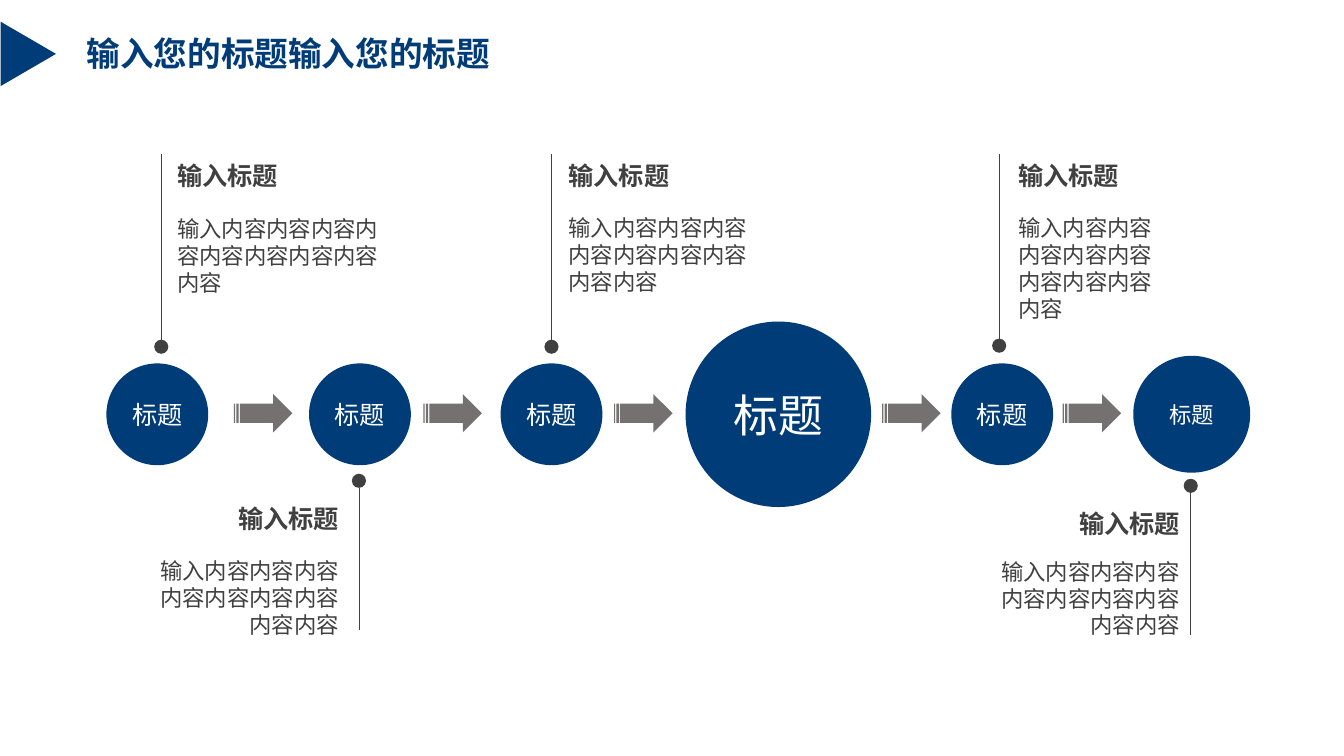
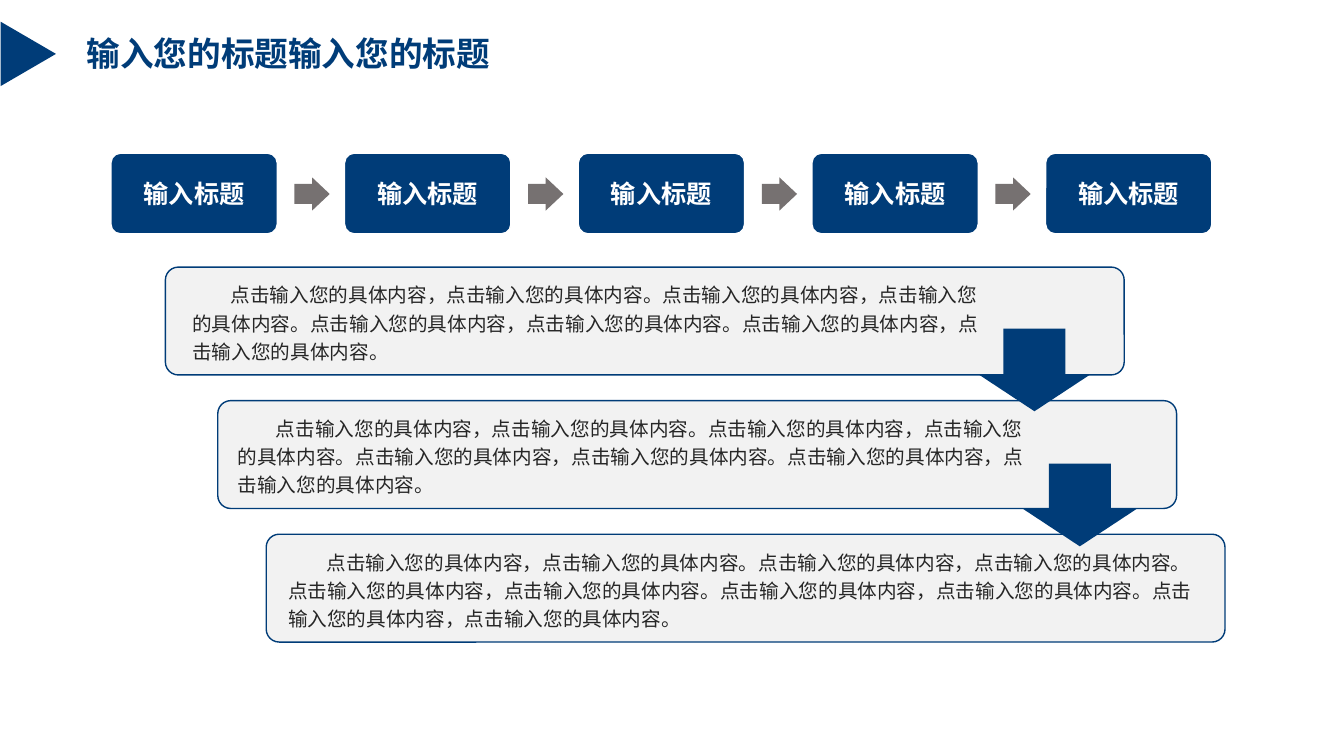
from dataclasses import dataclass

from lxml.etree import SubElement
from pptx import Presentation
from pptx.dml.color import RGBColor
from pptx.enum.shapes import MSO_CONNECTOR, MSO_SHAPE
from pptx.enum.text import MSO_ANCHOR, MSO_AUTO_SIZE, PP_ALIGN
from pptx.oxml.ns import qn
from pptx.util import Inches, Pt


@dataclass(frozen=True)
class Theme:
    """Colours, font and type sizes shared by the slides."""
    navy: str = "003C78"
    grey: str = "767171"
    dark: str = "404040"
    ink: str = "262626"
    pale: str = "F2F2F2"
    white: str = "FFFFFF"
    font: str = "Noto Sans CJK JP"
    title: int = 24
    head: int = 18
    body: int = 16
    note: int = 14
    big: int = 32


T = Theme()
TITLE = "输入您的标题输入您的标题"
HEAD = "输入标题"
CONTENT = "输入" + "内容" * 9
SENTENCE = "点击输入您的具体内容，点击输入您的具体内容。"


def style(p, size, color, bold=False, align=PP_ALIGN.LEFT):
    """Format every run of a paragraph."""
    p.alignment = align
    for r in p.runs:
        r.font.size = Pt(size)
        r.font.bold = bold
        r.font.color.rgb = RGBColor.from_string(color)
        r.font.name = T.font
        SubElement(r._r.get_or_add_rPr(), qn("a:ea")).set("typeface", T.font)


def shape(s, kind, x, y, w, h, fill, line=None, adj=()):
    """Add a flat preset shape."""
    sp = s.shapes.add_shape(kind, Inches(x), Inches(y), Inches(w), Inches(h))
    sp.shadow.inherit = False
    sp.fill.solid()
    sp.fill.fore_color.rgb = RGBColor.from_string(fill)
    if line:
        sp.line.color.rgb = RGBColor.from_string(line)
        sp.line.width = Pt(1)
    else:
        sp.line.fill.background()
    for i, value in enumerate(adj):
        sp.adjustments[i] = value
    return sp


def label(sp, text, size, bold=False):
    """Centre white text in a shape."""
    tf = sp.text_frame
    tf.text = text
    tf.word_wrap = True
    tf.vertical_anchor = MSO_ANCHOR.MIDDLE
    tf.margin_left = tf.margin_right = 0
    style(tf.paragraphs[0], size, T.white, bold, PP_ALIGN.CENTER)


def titled_slide(prs):
    """Add a slide with the title and the edge triangle."""
    s = prs.slides.add_slide(prs.slide_layouts[5])
    sp = s.shapes.title
    sp.left, sp.top, sp.width, sp.height = map(Inches, (0.76, 0.28, 4.24, 0.5))
    tf = sp.text_frame
    tf.text = TITLE
    tf.word_wrap = False
    tf.auto_size = MSO_AUTO_SIZE.NONE
    tf.vertical_anchor = MSO_ANCHOR.MIDDLE
    style(tf.paragraphs[0], T.title, T.navy, True)
    shape(s, MSO_SHAPE.ISOSCELES_TRIANGLE, -0.04, 0.26, 0.64, 0.55, T.navy).rotation = 90
    return s


def circle_chain(s, y):
    """Draw circles and striped arrows centred on the height y."""
    circles = [(1.56, 1.01, T.head), (3.57, 1.01, T.head), (5.47, 1.01, T.head),
               (7.72, 1.84, T.big), (9.94, 1.01, T.head), (11.82, 1.16, T.body)]
    for cx, d, size in circles:
        sp = shape(s, MSO_SHAPE.OVAL, cx - d / 2, y - d / 2, d, d, T.navy)
        label(sp, "标题", size)
    for x in (2.32, 4.2, 6.09, 8.75, 10.54):
        shape(s, MSO_SHAPE.STRIPED_RIGHT_ARROW, x, y - 0.2, 0.58, 0.38, T.grey)


def callout(s, x, y, w, h, gap, space, above):
    """Draw a dotted stem at x, y to y + h, with text right of it above the chain or left below."""
    dot = 0.14
    dot_y = y + h - dot if above else y
    shape(s, MSO_SHAPE.OVAL, x - dot / 2, dot_y, dot, dot, T.dark)
    start, end = (dot_y, y) if above else (y + dot, y + h)
    cx = s.shapes.add_connector(MSO_CONNECTOR.STRAIGHT, Inches(x), Inches(start), Inches(x), Inches(end))
    cx.line.color.rgb = RGBColor.from_string(T.dark)
    cx.line.width = Pt(0.5)
    SubElement(cx._element.spPr, qn("a:effectLst"))
    left, top = (x + gap, y + 0.01) if above else (x - gap - w, y + 0.24)
    tf = s.shapes.add_textbox(Inches(left), Inches(top), Inches(w), Inches(1.46)).text_frame
    tf.word_wrap = True
    tf.text = f"{HEAD}\n{CONTENT}"
    head, body = tf.paragraphs
    align = PP_ALIGN.LEFT if above else PP_ALIGN.RIGHT
    style(head, T.head, T.dark, True, align)
    style(body, T.body, T.dark, False, align)
    body.space_before = Pt(space)


def step_row(s, x, y, w, h, n=5):
    """Spread n step boxes over a row, with an arrow in each gap."""
    bw = 1.65
    pitch = (w - bw) / (n - 1)
    for i in range(n):
        bx = x + i * pitch
        sp = shape(s, MSO_SHAPE.ROUNDED_RECTANGLE, bx, y, bw, h, T.navy, T.white, (0.12,))
        label(sp, HEAD, T.head, True)
        if i < n - 1:
            shape(s, MSO_SHAPE.RIGHT_ARROW, bx + 1.82, y + 0.24, 0.35, 0.33, T.grey, adj=(0.6, 0.53))


def panel(s, x, y, w, h, pairs, left, right):
    """Draw a bordered panel with an indented paragraph."""
    sp = shape(s, MSO_SHAPE.ROUNDED_RECTANGLE, x, y, w, h, T.pale, T.navy, (0.12,))
    tf = sp.text_frame
    tf.text = SENTENCE * pairs
    tf.word_wrap = True
    tf.vertical_anchor = MSO_ANCHOR.MIDDLE
    tf.margin_left, tf.margin_right = Inches(left), Inches(right)
    p = tf.paragraphs[0]
    p.line_spacing = 1.2
    p._p.get_or_add_pPr().set("indent", str(Inches(0.38)))
    style(p, T.note, T.ink)


def panel_stairs(s, x, y):
    """Step three panels down to the right, linked by down arrows."""
    panels = [(0, 4, 0.23, 1.33), (0.52, 4, 0.16, 1.37), (1, 5, 0.18, 0.22)]
    for i, (dx, pairs, left, right) in enumerate(panels):
        panel(s, x + dx, y + i * 1.325, 9.51, 1.07, pairs, left, right)
    for i in range(2):
        shape(s, MSO_SHAPE.DOWN_ARROW, x + 8.06 + i * 0.45, y + 0.61 + i * 1.34,
              1.12, 0.82, T.navy, adj=(0.55, 0.45))


def timeline_slide(prs):
    """Build the slide with the circle chain and its callouts."""
    s = titled_slide(prs)
    circle_chain(s, 4.11)
    callouts = [(1.6, 1.53, 2.23, 1.98, 0.06, 18, True), (3.56, 4.7, 2.02, 1.55, 0.1, 17, False),
                (5.47, 1.53, 2.17, 1.98, 0.07, 17, True), (9.91, 1.53, 1.74, 1.97, 0.09, 17, True),
                (11.81, 4.75, 2.19, 1.55, 0.01, 14, False)]
    for args in callouts:
        callout(s, *args)


def steps_slide(prs):
    """Build the slide with the step row and the panels."""
    s = titled_slide(prs)
    step_row(s, 1.1, 1.52, 10.92, 0.8)
    panel_stairs(s, 1.64, 2.65)


def main():
    """Build and save the presentation."""
    prs = Presentation()
    prs.slide_width, prs.slide_height = Inches(13.33), Inches(7.5)
    timeline_slide(prs)
    steps_slide(prs)
    prs.save("out.pptx")


if __name__ == "__main__":
    main()
